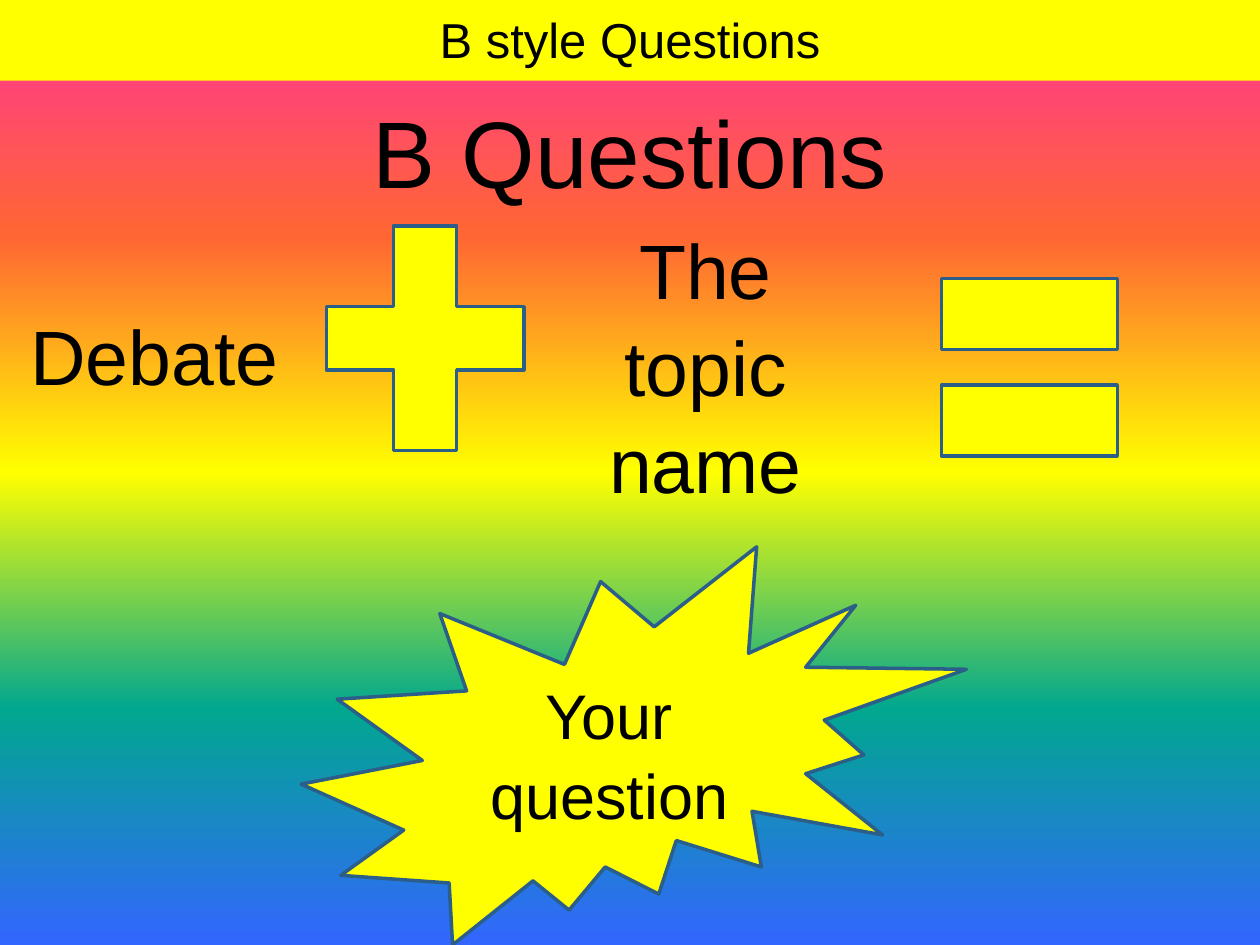
from dataclasses import dataclass

from lxml import etree
from pptx import Presentation
from pptx import util as u
from pptx.dml.color import RGBColor
from pptx.enum import shapes, text
from pptx.oxml import ns

SHAPE = shapes.MSO_SHAPE
ANCHOR = text.MSO_ANCHOR
ALIGN = text.PP_ALIGN


@dataclass(frozen=True)
class Theme:
    font: str = "Arial"
    ink: str = "000000"
    accent: str = "FFFF00"
    outline: str = "2B5F8A"
    outline_pt: float = 2
    rainbow: tuple = ("FF3399", "FF6633", "FFFF00", "01A78F", "3366FF")
    title: int = 28
    heading: int = 54
    term: int = 44
    burst: int = 36
    leading: float = 1.05


class Builder:
    """Holds the theme and the current slide."""

    def __init__(self, prs, theme):
        self.theme = theme
        self.s = prs.slides.add_slide(prs.slide_layouts[5])

    def background(self):
        fill = self.s.background.fill
        fill.gradient()
        fill.gradient_angle = 270  # counter-clockwise: runs top to bottom
        stops = self.s.element.find(".//" + ns.qn("a:gsLst"))
        for old in list(stops):
            stops.remove(old)
        step = 100000 // (len(self.theme.rainbow) - 1)
        for i, color in enumerate(self.theme.rainbow):
            gs = etree.SubElement(stops, ns.qn("a:gs"), pos=str(i * step))
            etree.SubElement(gs, ns.qn("a:srgbClr"), val=color)

    def set_text(self, sp, words, size, align=ALIGN.CENTER, inset=None, leading=None, **frame):
        tf = sp.text_frame
        tf.text = words
        fmt = {"word_wrap": True, "auto_size": text.MSO_AUTO_SIZE.NONE, **frame}
        if inset is not None:
            for side in ("left", "top", "right", "bottom"):
                fmt["margin_" + side] = u.Inches(inset)
        for name, value in fmt.items():
            setattr(tf, name, value)
        p = tf.paragraphs[0]
        p.alignment = align
        p.line_spacing = leading or self.theme.leading
        font = p.runs[0].font
        for name, value in {"name": self.theme.font, "size": u.Pt(size)}.items():
            setattr(font, name, value)
        font.color.rgb = RGBColor.from_string(self.theme.ink)

    def paint(self, sp):
        sp.fill.solid()
        sp.fill.fore_color.rgb = RGBColor.from_string(self.theme.accent)

    def title(self, words, box):
        sp = self.s.shapes.title
        for name, value in zip(("left", "top", "width", "height"), box):
            setattr(sp, name, u.Inches(value))
        self.paint(sp)
        self.set_text(sp, words, self.theme.title, inset=0.1, leading=1.0,
                      vertical_anchor=ANCHOR.BOTTOM)

    def label(self, words, box, size, **style):
        sp = self.s.shapes.add_textbox(*map(u.Inches, box))
        self.set_text(sp, words, size, **style)

    def symbol(self, kind, box):
        sp = self.s.shapes.add_shape(kind, *map(u.Inches, box))
        sp.shadow.inherit = False
        self.paint(sp)
        sp.line.color.rgb = RGBColor.from_string(self.theme.outline)
        sp.line.width = u.Pt(self.theme.outline_pt)
        return sp


def main():
    prs = Presentation()
    prs.slide_width, prs.slide_height = u.Inches(10), u.Inches(7.5)
    theme = Theme()
    b = Builder(prs, theme)
    b.background()

    # Title band and heading
    b.title("B style Questions", (0, 0, 10, 0.64))
    b.label("B Questions", (0, 0.6, 10, 6.38), theme.heading, inset=0.1)

    # Equation: debate + topic =
    b.label("Debate", (0.14, 2.36, 2.68, 0.84), theme.term, align=ALIGN.LEFT)
    b.symbol(SHAPE.MATH_PLUS, (2.31, 1.47, 2.13, 2.43))
    b.label("The topic name", (4.4, 1.68, 2.4, 2.32), theme.term)
    b.symbol(SHAPE.MATH_EQUAL, (7.22, 1.72, 1.9, 2.39))

    # Result burst
    burst = b.symbol(SHAPE.EXPLOSION2, (2.39, 4.34, 5.28, 3.16))
    b.set_text(burst, "Your question", theme.burst, vertical_anchor=ANCHOR.MIDDLE)

    prs.save("out.pptx")


if __name__ == "__main__":
    main()
